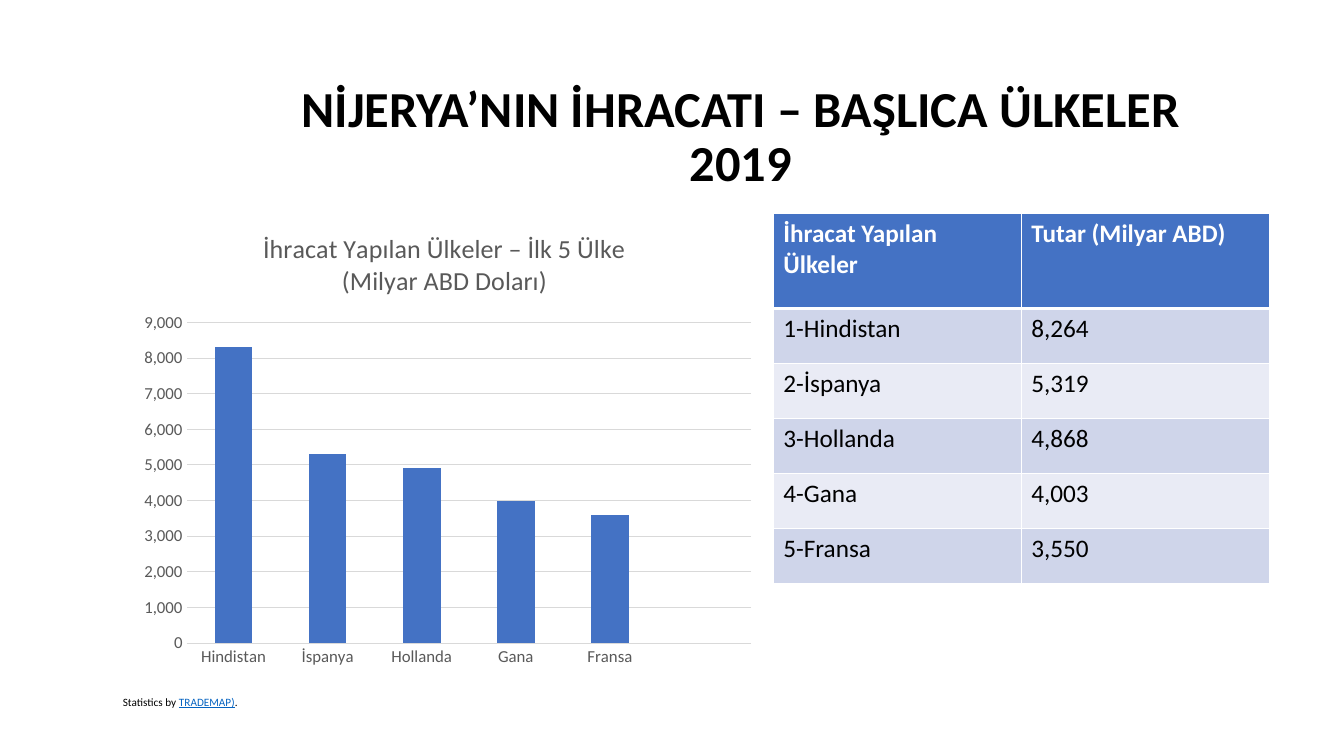
from lxml.etree import SubElement
from pptx import Presentation
from pptx.chart.data import CategoryChartData
from pptx.dml.color import RGBColor
from pptx.enum.chart import XL_CHART_TYPE, XL_TICK_MARK
from pptx.enum.text import MSO_ANCHOR, PP_ALIGN
from pptx.oxml import parse_xml
from pptx.oxml.ns import nsdecls, qn
from pptx.util import Inches, Pt

EXPORTS = [("Hindistan", 8264), ("İspanya", 5319), ("Hollanda", 4868),
           ("Gana", 4003), ("Fransa", 3550)]
BLUE, GRAY, PALE = "4472C4", "595959", "D9D9D9"
BLACK, WHITE, LINK = "000000", "FFFFFF", "0563C1"
BANDS = ["CFD5EA", "E9EBF5"]


def color(code):
    return RGBColor.from_string(code)


def layout(node, box, spot, inner=False):
    """Place a chart part by inches within the chart: x, y and maybe w, h."""
    for old in node.findall(qn("c:layout")):
        node.remove(old)
    frame = parse_xml(f"<c:layout {nsdecls('c')}><c:manualLayout/></c:layout>")
    rules = [("layoutTarget", "inner")] if inner else []
    rules += [("xMode", "edge"), ("yMode", "edge")]
    shares = [part / whole for part, whole in zip(spot, box[2:] * 2)]
    for name, value in rules + list(zip("xywh", shares)):
        SubElement(frame[0], qn(f"c:{name}")).set("val", str(value))
    node.insert(0 if inner else 1, frame)


def border(cell, sides):
    """Draw white cell borders, given as pairs of side and points."""
    props = cell._tc.get_or_add_tcPr()
    for side, width in sides:
        props.append(parse_xml(
            f'<a:ln{side} {nsdecls("a")} w="{Pt(width)}"><a:solidFill>'
            f'<a:srgbClr val="{WHITE}"/></a:solidFill></a:ln{side}>'))


class Board:
    """Holds the font and the slide being built."""

    def __init__(self, slide, face="Calibri"):
        self.slide, self.face = slide, face

    def style(self, font, size, code=BLACK, bold=False):
        font.name, font.size, font.bold = self.face, Pt(size), bold
        font.color.rgb = color(code)

    def text(self, box, runs, size, bold=False, align=PP_ALIGN.LEFT, space=1.0):
        """Add a text box; runs are pairs of text and colour."""
        frame = self.slide.shapes.add_textbox(*map(Inches, box)).text_frame
        frame.word_wrap = True
        frame.vertical_anchor = MSO_ANCHOR.TOP
        para = frame.paragraphs[0]
        para.alignment, para.line_spacing = align, space
        self.style(para.font, size, bold=bold)
        for words, code in runs:
            run = para.add_run()
            run.text = words
            run.font.color.rgb = color(code)
            if code == LINK:
                run.font.underline = True

    def axis(self, axis):
        axis.major_tick_mark = axis.minor_tick_mark = XL_TICK_MARK.NONE
        self.style(axis.tick_labels.font, 12, GRAY)

    def rule(self, line):
        line.color.rgb, line.width = color(PALE), Pt(0.75)

    def chart(self, box, title, data):
        """Add a column chart of rounded values, one place free at the right."""
        source = CategoryChartData(number_format="#,##0")
        source.categories = [name for name, _ in data] + [""]
        source.add_series("Series 1", [round(value, -2) for _, value in data] + [None])
        chart = self.slide.shapes.add_chart(
            XL_CHART_TYPE.COLUMN_CLUSTERED, *map(Inches, box), source).chart
        self.style(chart.font, 10)
        chart.has_legend = False
        chart.has_title = True
        head = chart.chart_title
        head.text_frame.text = title
        for para in head.text_frame.paragraphs:
            self.style(para.font, 18.6, GRAY)
        head.include_in_layout = False
        layout(head._element, box, (1.28, 0.14))
        layout(chart._chartSpace.chart.plotArea, box, (0.55, 1.08, 5.6, 3.18), True)

        base, scale = chart.category_axis, chart.value_axis
        for axis in (base, scale):
            self.axis(axis)
        self.rule(base.format.line)
        self.rule(scale.major_gridlines.format.line)
        scale.format.line.fill.background()
        scale.minimum_scale, scale.maximum_scale, scale.major_unit = 0, 9000, 1000
        scale.tick_labels.number_format = "#,##0"
        scale.tick_labels.number_format_is_linked = False

        plot = chart.plots[0]
        plot.gap_width, plot.vary_by_categories = 150, False
        fill = plot.series[0].format.fill
        fill.solid()
        fill.fore_color.rgb = color(BLUE)

    def table(self, box, rows, top):
        """Add a table; top is the header height, other rows share the rest."""
        grid = self.slide.shapes.add_table(
            len(rows), len(rows[0]), *map(Inches, box)).table
        rest = (box[3] - top) / (len(rows) - 1)
        for i, row in enumerate(rows):
            head = i == 0
            grid.rows[i].height = Inches(top if head else rest)
            for j, words in enumerate(row):
                cell = grid.cell(i, j)
                border(cell, [("L", 1), ("R", 1), ("T", 3 if i == 1 else 1),
                              ("B", 3 if head else 1)])
                cell.fill.solid()
                cell.fill.fore_color.rgb = color(BLUE if head else BANDS[(i - 1) % 2])
                cell.text = words
                self.style(cell.text_frame.paragraphs[0].font, 18,
                           WHITE if head else BLACK, head)


def main():
    deck = Presentation()
    deck.slide_width, deck.slide_height = Inches(13.33), Inches(7.5)
    board = Board(deck.slides.add_slide(deck.slide_layouts[6]))
    board.text((2.4, 0.78, 9.9, 0.9),
               [("NİJERYA’NIN İHRACATI – BAŞLICA ÜLKELER 2019", BLACK)],
               36, True, PP_ALIGN.CENTER, 0.9)
    board.chart((1.3, 2.12, 6.27, 4.59),
                "İhracat Yapılan Ülkeler – İlk 5 Ülke\n(Milyar ABD Doları)", EXPORTS)
    rows = [("İhracat Yapılan Ülkeler", "Tutar (Milyar ABD)")]
    rows += [(f"{i}-{name}", f"{value:,}")
             for i, (name, value) in enumerate(EXPORTS, 1)]
    board.table((7.67, 2.12, 4.92, 3.67), rows, 0.94)
    board.text((1.12, 6.85, 8.8, 0.36),
               [("Statistics by ", BLACK), ("TRADEMAP)", LINK), (".", BLACK)], 8)
    deck.save("out.pptx")


if __name__ == "__main__":
    main()
